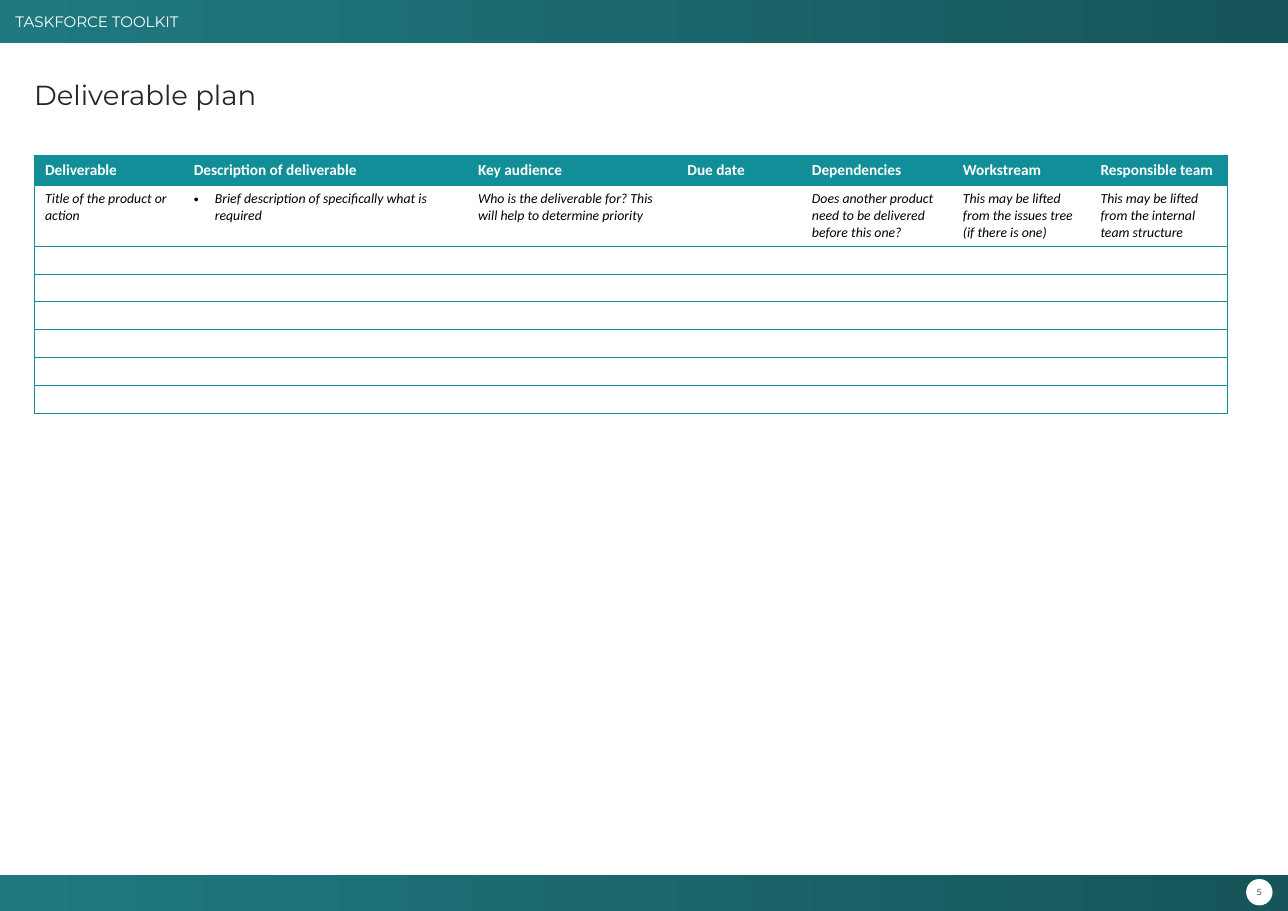
import pptx
import pptx.util
import pptx.dml.color
import pptx.enum.shapes
import pptx.enum.text
import pptx.oxml.ns
from lxml import etree

WIDTH, HEIGHT = 11.69, 8.27
COLUMNS = [11.55, 22.07, 16.25, 9.67, 11.72, 10.69, 10.69]
ROWS = [3.3, 6.71] + [3.05] * 6
HEADERS = ["Deliverable", "Description of deliverable", "Key audience", "Due date",
           "Dependencies", "Workstream", "Responsible team"]
GUIDANCE = ["Title of the product or action",
            "Brief description of specifically what is required",
            "Who is the deliverable for? This will help to determine priority",
            "",
            "Does another product need to be delivered before this one?",
            "This may be lifted from the issues tree (if there is one)",
            "This may be lifted from the internal team structure"]
SHAPE = pptx.enum.shapes.MSO_SHAPE
MIDDLE = pptx.enum.text.MSO_ANCHOR.MIDDLE
TOP = pptx.enum.text.MSO_ANCHOR.TOP
CENTER = pptx.enum.text.PP_ALIGN.CENTER


def rgb(value):
    return pptx.dml.color.RGBColor.from_string(value)


def across(share):
    return pptx.util.Inches(WIDTH * share / 100)


def down(share):
    return pptx.util.Inches(HEIGHT * share / 100)


def box(x, y, w, h):
    return across(x), down(y), across(w), down(h)


def assign(target, values):
    for name, value in values.items():
        setattr(target, name, value)


def sub(parent, tag, **attributes):
    return etree.SubElement(parent, pptx.oxml.ns.qn(tag), attributes)


def add_text(tf, text, color, size, name="Montserrat", **values):
    p = tf.paragraphs[0]
    r = p.add_run()
    r.text = text
    assign(r.font, dict(values, size=pptx.util.Pt(size), name=name))
    r.font.color.rgb = rgb(color)
    return p


def set_frame(tf, left=0, top=0, right=0, bottom=0, **values):
    margins = dict(margin_left=across(left), margin_top=down(top),
                   margin_right=across(right), margin_bottom=down(bottom))
    assign(tf, margins | values)


def add_plain(s, kind, area):
    sp = s.shapes.add_shape(kind, *box(*area))
    sp.shadow.inherit = False
    sp.line.fill.background()
    return sp


def add_band(s, y, h):
    sp = add_plain(s, SHAPE.RECTANGLE, (0, y, 100, h))
    sp.fill.gradient()
    sp.fill.gradient_angle = 0
    for stop, color in zip(sp.fill.gradient_stops, ("1F7980", "16555A")):
        stop.color.rgb = rgb(color)
    return sp


def add_page_number(s, number):
    sp = add_plain(s, SHAPE.OVAL, (96.75, 96.49, 2.05, 2.9))
    sp.fill.solid()
    sp.fill.fore_color.rgb = rgb("FFFFFF")
    set_frame(sp.text_frame, vertical_anchor=MIDDLE, word_wrap=False)
    add_text(sp.text_frame, number, "222A35", 5.7).alignment = CENTER


def add_title(s, text):
    sp = s.shapes.add_textbox(*box(2.65, 8.22, 66.81, 8.95))
    set_frame(sp.text_frame, word_wrap=True)
    add_text(sp.text_frame, text, "262626", 18).line_spacing = 1.1


def set_borders(cell, sides):
    tcPr = cell._tc.get_or_add_tcPr()
    for side in "LRTB":
        ln = sub(tcPr, f"a:ln{side}", w=str(pptx.util.Pt(0.75)))
        if side in sides:
            sub(sub(ln, "a:solidFill"), "a:srgbClr", val="0D8E97")
        else:
            sub(ln, "a:noFill")


def add_bullet(p):
    indent = pptx.util.Inches(0.19)
    pPr = p._p.get_or_add_pPr()
    assign_xml = {"marL": str(indent), "indent": str(-indent)}
    for name, value in assign_xml.items():
        pPr.set(name, value)
    sub(pPr, "a:buFont", typeface="Arial")
    sub(pPr, "a:buChar", char="•")


def fill_cell(cell, text, header):
    if header:
        cell.fill.solid()
        cell.fill.fore_color.rgb = rgb("118E97")
    else:
        cell.fill.background()
    cell.vertical_anchor = MIDDLE if header else TOP
    p = cell.text_frame.paragraphs[0]
    if text:
        add_text(cell.text_frame, text, "FFFFFF" if header else "000000",
                 10 if header else 9, "Calibri", bold=header, italic=not header)
    else:
        sub(sub(p._p, "a:endParaRPr", sz="900"), "a:latin", typeface="Calibri")
    return p


def add_plan(s):
    frame = s.shapes.add_table(len(ROWS), len(COLUMNS),
                               *box(2.65, 17.05, sum(COLUMNS), sum(ROWS)))
    table = frame.table
    for column, share in zip(table.columns, COLUMNS):
        column.width = across(share)
    for row, share in zip(table.rows, ROWS):
        row.height = down(share)
    texts = [HEADERS, GUIDANCE] + [[""] * len(COLUMNS)] * (len(ROWS) - 2)
    for i, line in enumerate(texts):
        for j, text in enumerate(line):
            cell = table.cell(i, j)
            edge = {0: "L", len(COLUMNS) - 1: "R"}.get(j, "")
            set_borders(cell, "TB" + edge)
            p = fill_cell(cell, text, i == 0)
            if (i, j) == (1, 1):
                add_bullet(p)


def main():
    prs = pptx.Presentation()
    assign(prs, {"slide_width": across(100), "slide_height": down(100)})
    s = prs.slides.add_slide(prs.slide_layouts[6])
    header = add_band(s, 0, 4.72)
    set_frame(header.text_frame, 1.2, 0.73, 0.6, 0.73, vertical_anchor=MIDDLE, word_wrap=True)
    p = add_text(header.text_frame, "TASKFORCE TOOLKIT", "FFFFFF", 9.9)
    p.alignment = pptx.enum.text.PP_ALIGN.LEFT
    add_band(s, 96.01, 3.99)
    add_page_number(s, "5")
    add_title(s, "Deliverable plan")
    add_plan(s)
    prs.save("out.pptx")


if __name__ == "__main__":
    main()
